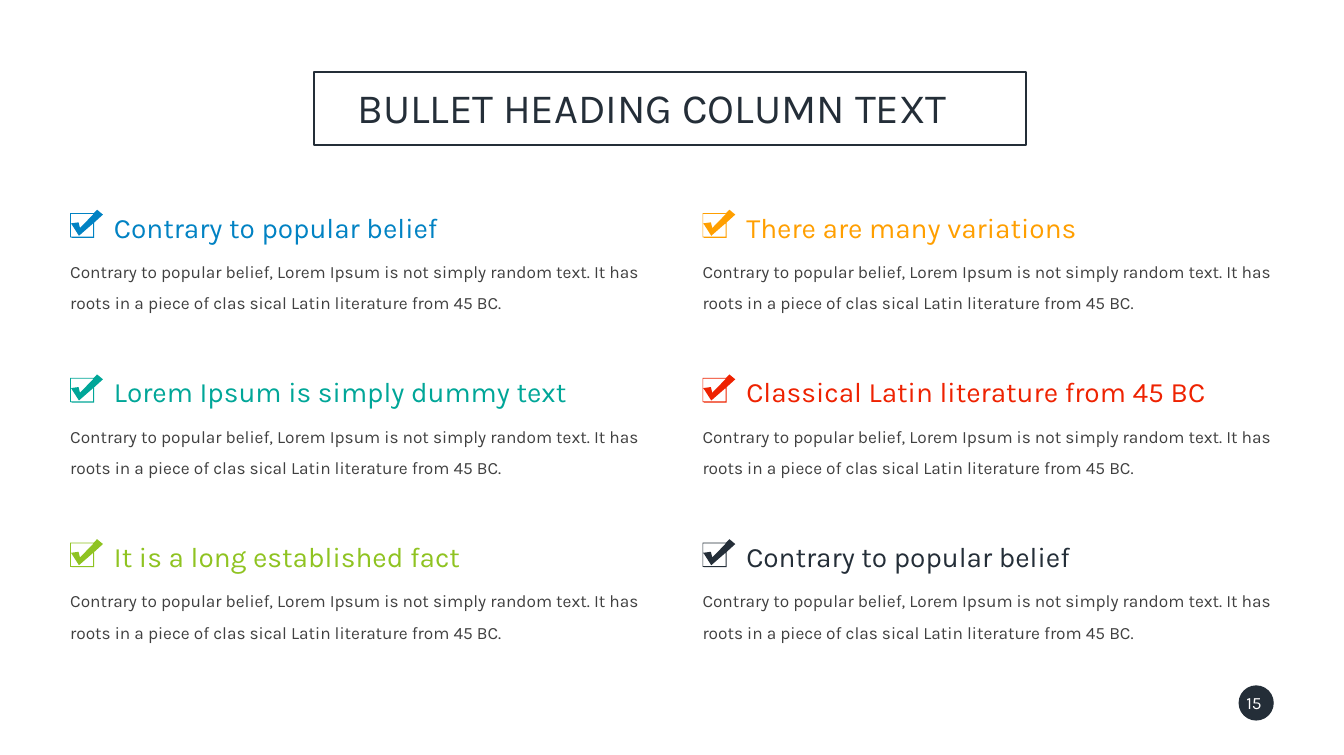
from dataclasses import dataclass

from pptx import Presentation
from pptx.dml.color import RGBColor
from pptx.enum.shapes import MSO_SHAPE
from pptx.enum.text import MSO_AUTO_SIZE
from pptx.util import Cm, Pt

TITLE = "BULLET HEADING COLUMN TEXT"
PAGE_NUMBER = "15"
BODY = (
    "Contrary to popular belief, Lorem Ipsum is not simply random text. "
    "It has roots in a piece of clas sical Latin literature from 45 BC."
)
COLUMNS = [
    [
        ("Contrary to popular belief", "0182C3"),
        ("Lorem Ipsum is simply dummy text", "00A698"),
        ("It is a long established fact", "8FC321"),
    ],
    [
        ("There are many variations", "FF9F00"),
        ("Classical Latin literature from 45 BC", "EE2201"),
        ("Contrary to popular belief", "242E38"),
    ],
]


@dataclass(frozen=True)
class Theme:
    font: str = "Karla"
    dark: str = "242E38"
    body: str = "404040"
    light: str = "FFFFFF"
    title_size: int = 58
    heading_size: int = 39
    text_size: int = 24
    frame_width: int = 3


THEME = Theme()
LEFT, TOP = 3.45, 10.3
COLUMN_PITCH, ROW_PITCH = 31.07, 8.09

UNITS_PER_CM = 100
BOX_AND_TICK = [
    (132, 0), (114, 19), (114, 17), (0, 17), (0, 136), (7, 136),
    (7, 138), (118, 138), (118, 63), (161, 24),
]
BOX_INSIDE = [
    (113, 23), (48, 90), (41, 62), (4, 67), (43, 128),
    (113, 67), (113, 132), (3, 132), (3, 21), (113, 21),
]


def paint(shape, color):
    shape.shadow.inherit = False
    shape.fill.solid()
    shape.fill.fore_color.rgb = RGBColor.from_string(color)
    shape.line.fill.background()


def add_text(slide, text, box, size, color, line_spacing=None):
    frame = slide.shapes.add_textbox(*map(Cm, box)).text_frame
    frame.word_wrap = True
    frame.auto_size = MSO_AUTO_SIZE.SHAPE_TO_FIT_TEXT
    frame.text = text
    paragraph = frame.paragraphs[0]
    paragraph.line_spacing = line_spacing
    font = paragraph.runs[0].font
    font.name = THEME.font
    font.size = Pt(size)
    font.color.rgb = RGBColor.from_string(color)


def add_checkbox(slide, left, top, color):
    outline = slide.shapes.build_freeform(*BOX_AND_TICK[0], scale=Cm(1) / UNITS_PER_CM)
    outline.add_line_segments(BOX_AND_TICK[1:], close=True)
    outline.move_to(*BOX_INSIDE[0])
    outline.add_line_segments(BOX_INSIDE[1:], close=True)
    paint(outline.convert_to_shape(Cm(left), Cm(top)), color)


def add_title(slide):
    add_text(slide, TITLE, (17.3, 3.89, 32.16, 2.74), THEME.title_size, THEME.dark)
    frame = slide.shapes.add_shape(
        MSO_SHAPE.RECTANGLE, Cm(15.42), Cm(3.53), Cm(35), Cm(3.58)
    )
    frame.shadow.inherit = False
    frame.fill.background()
    frame.line.color.rgb = RGBColor.from_string(THEME.dark)
    frame.line.width = Pt(THEME.frame_width)


def add_item(slide, left, top, heading, color):
    add_checkbox(slide, left, top, color)
    add_text(slide, heading, (left + 1.9, top - 0.1, 23.85, 1.9), THEME.heading_size, color)
    add_text(slide, BODY, (left - 0.25, top + 1.9, 30.23, 3.33), THEME.text_size, THEME.body, 1.5)


def add_page_number(slide):
    badge = slide.shapes.add_shape(
        MSO_SHAPE.OVAL, Cm(60.86), Cm(33.66), Cm(1.73), Cm(1.73)
    )
    paint(badge, THEME.dark)
    add_text(slide, PAGE_NUMBER, (60.99, 33.86, 1.88, 1.3), THEME.text_size, THEME.light)


def main():
    """Build the two-column slide of headed bullet texts."""
    presentation = Presentation()
    presentation.slide_width = Cm(66.04)
    presentation.slide_height = Cm(37.08)
    slide = presentation.slides.add_slide(presentation.slide_layouts[6])
    add_title(slide)
    for column, items in enumerate(COLUMNS):
        for row, (heading, color) in enumerate(items):
            left = LEFT + column * COLUMN_PITCH
            top = TOP + row * ROW_PITCH
            add_item(slide, left, top, heading, color)
    add_page_number(slide)
    presentation.save("out.pptx")


if __name__ == "__main__":
    main()
